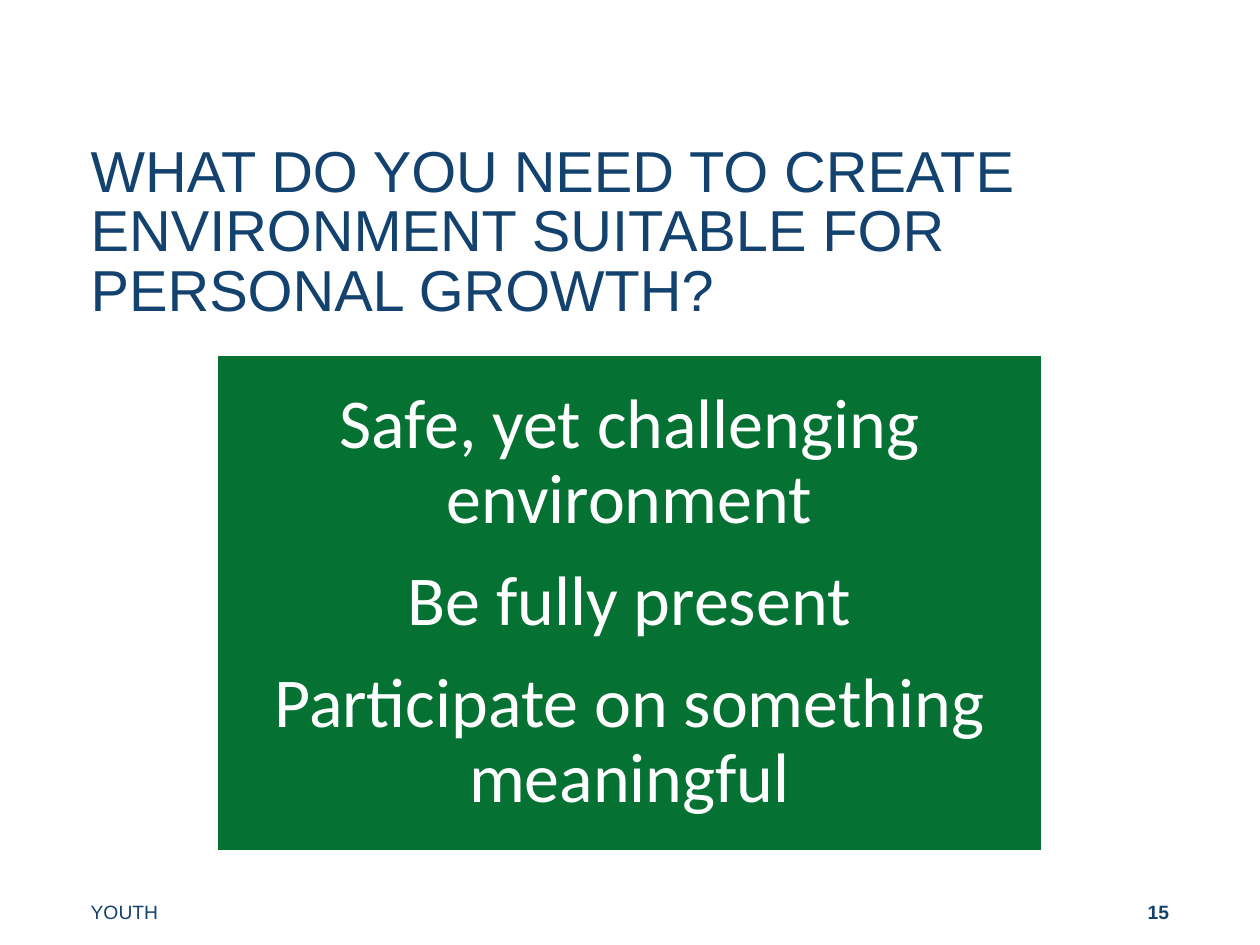
from pptx import Presentation
from pptx.dml.color import RGBColor
from pptx.enum.shapes import MSO_SHAPE
from pptx.enum.text import MSO_ANCHOR, MSO_AUTO_SIZE, PP_ALIGN
from pptx.util import Inches, Pt

RECTANGLE = MSO_SHAPE.RECTANGLE
MIDDLE, BOTTOM = MSO_ANCHOR.MIDDLE, MSO_ANCHOR.BOTTOM
LEFT, CENTER, RIGHT = PP_ALIGN.LEFT, PP_ALIGN.CENTER, PP_ALIGN.RIGHT
NO_AUTOFIT = MSO_AUTO_SIZE.NONE
TITLE_ONLY = 5


def color(value):
    return RGBColor.from_string(value)


class SlideBuilder:
    navy = "13426F"
    green = "057233"
    white = "FFFFFF"
    heading_font = "Arial"
    panel_font = "Calibri"

    def __init__(self, presentation):
        self.slide = presentation.slides.add_slide(presentation.slide_layouts[TITLE_ONLY])

    def set_text(self, shape, lines, font, size, ink, align, anchor, insets, spacing, after=0, bold=False):
        frame = shape.text_frame
        frame.text = "\n".join(lines)
        frame.word_wrap = True
        frame.auto_size = NO_AUTOFIT
        frame.vertical_anchor = anchor
        (frame.margin_left, frame.margin_top,
         frame.margin_right, frame.margin_bottom) = map(Inches, insets)
        for paragraph in frame.paragraphs:
            paragraph.alignment = align
            paragraph.line_spacing = spacing
            paragraph.space_after = Pt(after)
            for run in paragraph.runs:
                run.font.name = font
                run.font.size = Pt(size)
                run.font.bold = bold
                run.font.color.rgb = color(ink)

    def title(self, text, left, top, width, height):
        heading = self.slide.shapes.title
        heading.left, heading.top = Inches(left), Inches(top)
        heading.width, heading.height = Inches(width), Inches(height)
        self.set_text(heading, [text], self.heading_font, 33, self.navy, LEFT, MIDDLE,
                      (0.71, 0.05, 0.1, 0.05), Pt(34))

    def panel(self, lines, left, top, width, height):
        panel = self.slide.shapes.add_shape(
            RECTANGLE, Inches(left), Inches(top), Inches(width), Inches(height))
        panel.shadow.inherit = False
        panel.fill.solid()
        panel.fill.fore_color.rgb = color(self.green)
        panel.line.color.rgb = color(self.white)
        panel.line.width = Pt(1)
        self.set_text(panel, lines, self.panel_font, 40, self.white, CENTER, MIDDLE,
                      (0.17, 0.17, 0.17, 0.17), 0.9, after=15)

    def footer(self, text, left, width, align, insets, bold=False):
        footer = self.slide.shapes.add_textbox(
            Inches(left), Inches(6.89), Inches(width), Inches(0.6))
        self.set_text(footer, [text], self.heading_font, 11, self.navy, align, BOTTOM,
                      insets, Pt(13.3), bold=bold)


def main():
    presentation = Presentation()
    presentation.slide_width = Inches(10)
    presentation.slide_height = Inches(7.5)

    builder = SlideBuilder(presentation)
    builder.title("WHAT DO YOU NEED TO CREATE ENVIRONMENT SUITABLE FOR PERSONAL GROWTH?",
                  0.01, 0.74, 9.98, 2.23)
    builder.panel(["Safe, yet challenging environment",
                   "Be fully present",
                   "Participate on something meaningful"],
                  1.72, 2.82, 6.55, 3.93)
    builder.footer("YOUTH", 0.01, 3.38, LEFT, (0.71, 0.05, 0, 0.16))
    builder.footer("15", 7.96, 2.03, RIGHT, (0, 0.05, 0.71, 0.16), bold=True)

    presentation.save("out.pptx")


if __name__ == "__main__":
    main()
